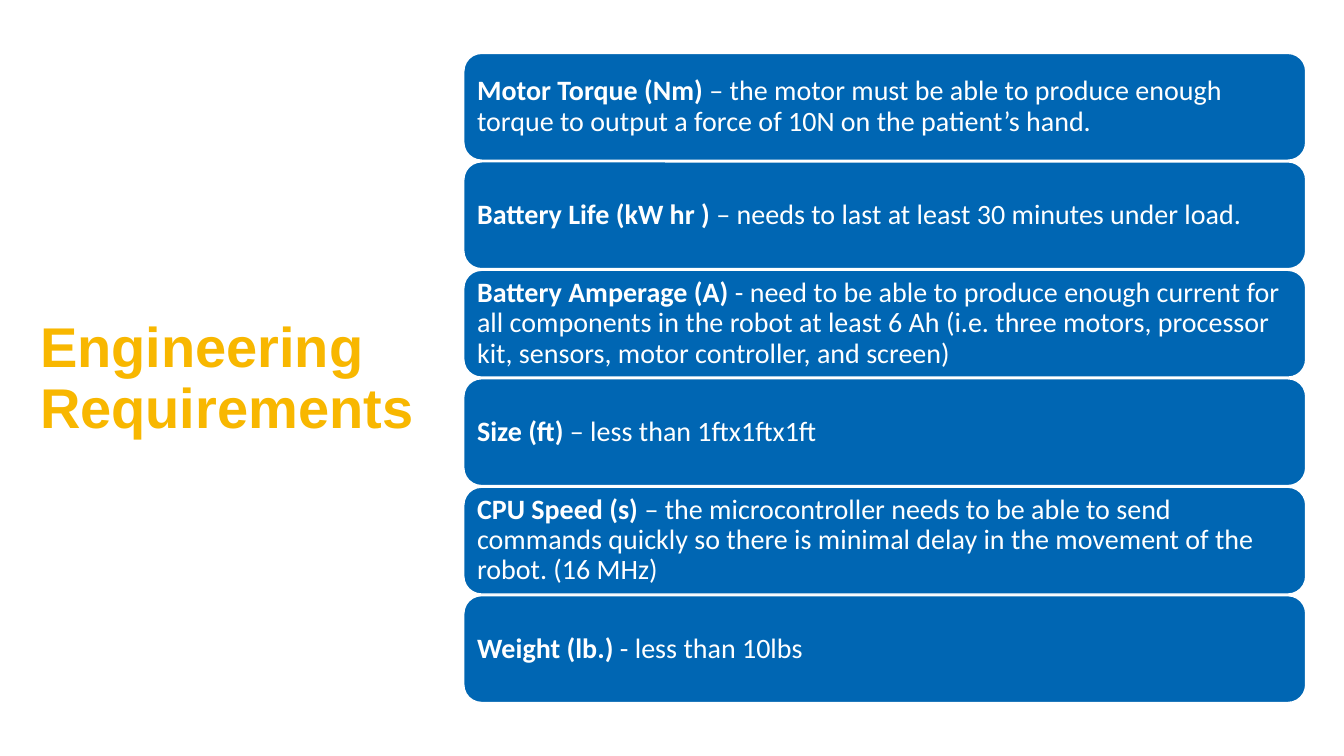
"""Build the Engineering Requirements slide: a title beside a stack of rounded cards."""
from pptx import Presentation
from pptx import util as u
from pptx.dml.color import RGBColor
from pptx.enum import shapes, text

GOLD = RGBColor(0xF8, 0xB7, 0x00)
BLUE = RGBColor(0x00, 0x66, 0xB3)
WHITE = RGBColor(0xFF, 0xFF, 0xFF)

REQUIREMENTS = [
    ("Motor Torque (Nm) ", "– the motor must be able to produce enough torque to output "
     "a force of 10N on the patient’s hand."),
    ("Battery Life (kW hr ) ", "– needs to last at least 30 minutes under load."),
    ("Battery Amperage (A) ", "- need to be able to produce enough current for all components "
     "in the robot at least 6 Ah (i.e. three motors, processor kit, sensors, "
     "motor controller, and screen)"),
    ("Size (ft) ", "– less than 1ftx1ftx1ft"),
    ("CPU Speed (s) ", "– the microcontroller needs to be able to send commands quickly "
     "so there is minimal delay in the movement of the robot. (16 MHz)"),
    ("Weight (lb.) ", "- less than 10lbs"),
]


def add_run(paragraph, content, *, font, size, color, bold=False):
    run = paragraph.add_run()
    run.text = content
    run.font.name = font
    run.font.size = u.Pt(size)
    run.font.color.rgb = color
    run.font.bold = bold


presentation = Presentation()
presentation.slide_width = u.Inches(13.33)
presentation.slide_height = u.Inches(7.5)
slide = presentation.slides.add_slide(presentation.slide_layouts[6])

cards_left, cards_top = u.Inches(4.6), u.Inches(0.53)
card_width, card_height = u.Inches(8.35), u.Inches(1.06)
cards_bottom = u.Inches(6.97)
row_pitch = (cards_bottom - cards_top - card_height) // (len(REQUIREMENTS) - 1)

title_left = u.Inches(0.3)
title = slide.shapes.add_textbox(title_left, u.Inches(3.18), cards_left - title_left, u.Inches(1.24))
title.text_frame.word_wrap = True
title.text_frame.vertical_anchor = text.MSO_ANCHOR.BOTTOM
paragraph = title.text_frame.paragraphs[0]
paragraph.line_spacing = 0.9
add_run(paragraph, "Engineering Requirements", font="Arial", size=40, color=GOLD, bold=True)

for row, (name, detail) in enumerate(REQUIREMENTS):
    card = slide.shapes.add_shape(
        shapes.MSO_SHAPE.ROUNDED_RECTANGLE,
        cards_left, cards_top + row * row_pitch, card_width, card_height)
    card.shadow.inherit = False
    card.fill.solid()
    card.fill.fore_color.rgb = BLUE
    card.line.color.rgb = WHITE
    card.line.width = u.Pt(1)

    frame = card.text_frame
    frame.word_wrap = True
    frame.vertical_anchor = text.MSO_ANCHOR.MIDDLE
    frame.margin_left = frame.margin_right = u.Inches(0.08)
    frame.margin_top = frame.margin_bottom = u.Inches(0.08)
    paragraph = frame.paragraphs[0]
    paragraph.alignment = text.PP_ALIGN.LEFT
    paragraph.line_spacing = 0.9
    add_run(paragraph, name, font="Calibri", size=20, color=WHITE, bold=True)
    add_run(paragraph, detail, font="Calibri", size=20, color=WHITE)

presentation.save("out.pptx")
